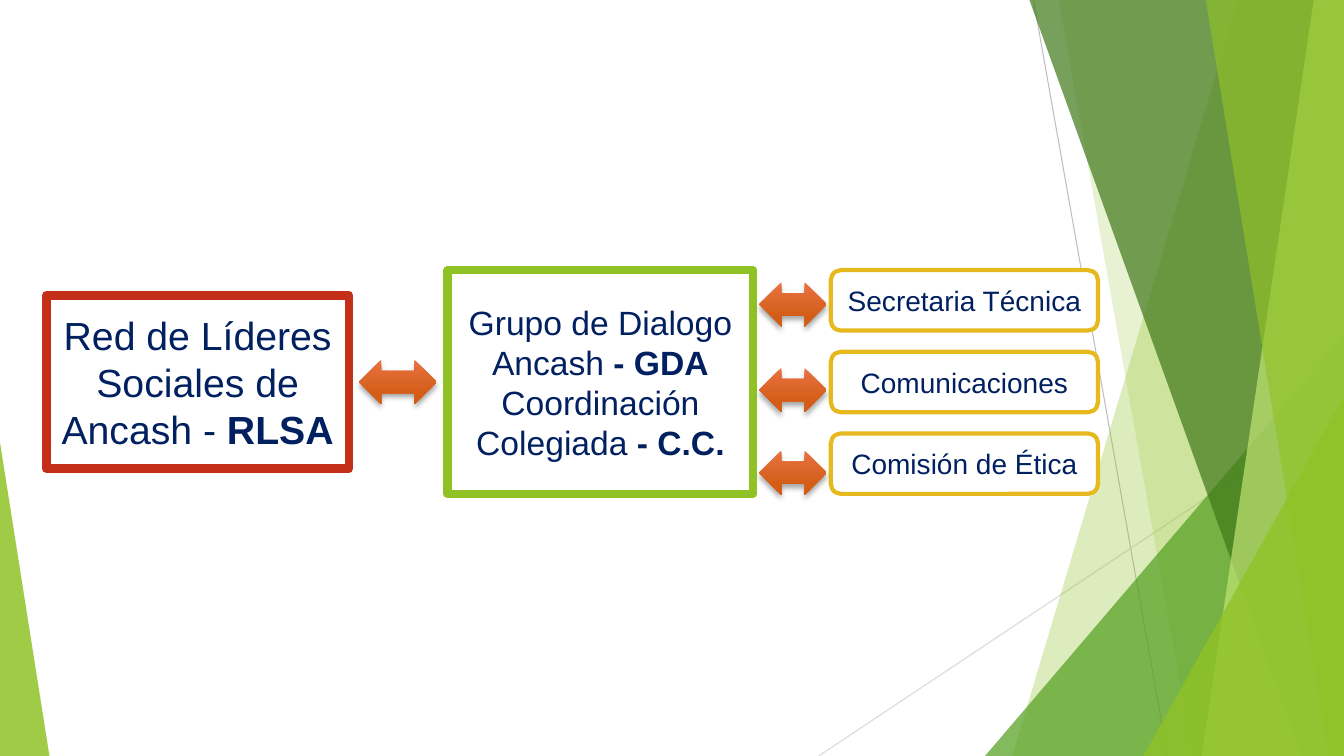
from lxml.etree import SubElement
from pptx import Presentation
from pptx.dml.color import RGBColor
from pptx.enum.shapes import MSO_CONNECTOR, MSO_SHAPE
from pptx.enum.text import MSO_ANCHOR, PP_ALIGN
from pptx.oxml.ns import qn
from pptx.util import Inches, Pt

WIDTH, HEIGHT = 13.33, 7.5
COLORS = {
    "white": "FFFFFF", "navy": "002060", "red": "C42F1A", "gold": "E6B91E",
    "lime": "90C226", "pale": "C0E474", "green": "54A021", "forest": "3F7819",
    "gray": "BFBFBF", "light gray": "D9D9D9",
    "arrow top": "E87242", "arrow bottom": "D35D16", "shadow": "000000",
}


def rgb(name):
    return RGBColor.from_string(COLORS[name])


def fill_solid(shape, color, opacity=100):
    shape.shadow.inherit = False
    shape.fill.solid()
    shape.fill.fore_color.rgb = rgb(color)
    if opacity < 100:
        color_node = shape.fill._xPr.find(qn("a:solidFill"))[0]
        SubElement(color_node, qn("a:alpha"), val=str(opacity * 1000))


def add_thin_line(slide, start, end, color):
    line = slide.shapes.add_connector(
        MSO_CONNECTOR.STRAIGHT, *(Inches(value) for value in start + end))
    line.line.color.rgb = rgb(color)
    line.line.width = Pt(0.75)
    SubElement(line._element.spPr, qn("a:effectLst"))


def add_band(slide, top_left, bottom_left, color, opacity):
    """Fill from a slanted left edge to the right side of the slide."""
    points = [(top_left, 0), (WIDTH, 0), (WIDTH, HEIGHT), (bottom_left, HEIGHT)]
    corners = [(Inches(x), Inches(y)) for x, y in points]
    builder = slide.shapes.build_freeform(*corners[0])
    builder.add_line_segments(corners[1:], close=True)
    band = builder.convert_to_shape()
    fill_solid(band, color, opacity)
    band.line.fill.background()


def add_corner(slide, left, top, width, apex, color, opacity):
    """Add a triangle standing on the bottom edge of the slide."""
    corner = slide.shapes.add_shape(
        MSO_SHAPE.ISOSCELES_TRIANGLE, Inches(left), Inches(top),
        Inches(width), Inches(HEIGHT - top))
    corner.adjustments[0] = apex
    fill_solid(corner, color, opacity)
    corner.line.fill.background()


def add_background(slide):
    add_thin_line(slide, (10.25, 0), (11.58, HEIGHT), "gray")
    add_thin_line(slide, (WIDTH, 4.03), (8.12, HEIGHT), "light gray")
    add_band(slide, 12.28, 10.04, "lime", 30)
    add_band(slide, 10.5, 11.83, "lime", 20)
    add_corner(slide, 9.77, 3.33, 3.56, 1, "green", 72)
    add_band(slide, 10.21, 12.91, "forest", 70)
    add_band(slide, 13.03, 11.92, "pale", 70)
    add_band(slide, 11.96, 13.18, "lime", 65)
    add_corner(slide, 11.34, 3.93, 1.99, 1, "lime", 80)
    add_corner(slide, 0, 4.39, 0.49, 0, "lime", 85)


def add_box(slide, kind, position, border, border_width, size, paragraphs):
    """Add a framed box; each paragraph is a (plain text, bold text) pair."""
    box = slide.shapes.add_shape(kind, *(Inches(value) for value in position))
    fill_solid(box, "white")
    box.line.color.rgb = rgb(border)
    box.line.width = Pt(border_width)
    frame = box.text_frame
    frame.word_wrap = True
    frame.vertical_anchor = MSO_ANCHOR.MIDDLE
    for index, (plain, bold) in enumerate(paragraphs):
        para = frame.add_paragraph() if index else frame.paragraphs[0]
        para.text = plain
        para.alignment = PP_ALIGN.CENTER
        if bold:
            span = para.add_run()
            span.text = bold
            span.font.bold = True
        for span in para.runs:
            span.font.name = "Arial"
            span.font.size = Pt(size)
            span.font.color.rgb = rgb("navy")


def add_double_arrow(slide, left, top, width):
    arrow = slide.shapes.add_shape(
        MSO_SHAPE.LEFT_RIGHT_ARROW, Inches(left), Inches(top),
        Inches(width), Inches(0.44))
    arrow.fill.gradient()
    arrow.fill.gradient_angle = 270
    stops = ((0, "arrow top"), (0.78, "arrow bottom"))
    for stop, (position, color) in zip(arrow.fill.gradient_stops, stops):
        stop.position = position
        stop.color.rgb = rgb(color)
    arrow.line.fill.background()
    arrow.shadow.inherit = False
    effects = arrow._element.spPr.find(qn("a:effectLst"))
    shadow = SubElement(effects, qn("a:outerShdw"), blurRad=str(Pt(4)),
                        dist=str(Pt(3)), dir="5400000", rotWithShape="0")
    shade = SubElement(shadow, qn("a:srgbClr"), val=COLORS["shadow"])
    SubElement(shade, qn("a:alpha"), val="35000")


def main():
    deck = Presentation()
    deck.slide_width, deck.slide_height = Inches(WIDTH), Inches(HEIGHT)
    slide = deck.slides.add_slide(deck.slide_layouts[6])
    add_background(slide)

    add_box(slide, MSO_SHAPE.RECTANGLE, (4.44, 2.68, 3.03, 2.22), "lime", 6, 24,
            [("Grupo de Dialogo Ancash", " - GDA"),
             ("Coordinación Colegiada", " - C.C.")])
    add_box(slide, MSO_SHAPE.RECTANGLE, (0.46, 2.93, 3, 1.72), "red", 6, 28,
            [("Red de Líderes Sociales de Ancash - ", "RLSA")])
    add_double_arrow(slide, 3.56, 3.57, 0.77)

    teams = (("Secretaria Técnica", 2.8), ("Comunicaciones", 3.65),
             ("Comisión de Ética", 4.47))
    for row, (team, arrow_top) in enumerate(teams):
        add_box(slide, MSO_SHAPE.ROUNDED_RECTANGLE,
                (8.24, 2.68 + 0.81 * row, 2.65, 0.6), "gold", 3, 20, [(team, "")])
        add_double_arrow(slide, 7.53, arrow_top, 0.67)

    deck.save("out.pptx")


if __name__ == "__main__":
    main()
